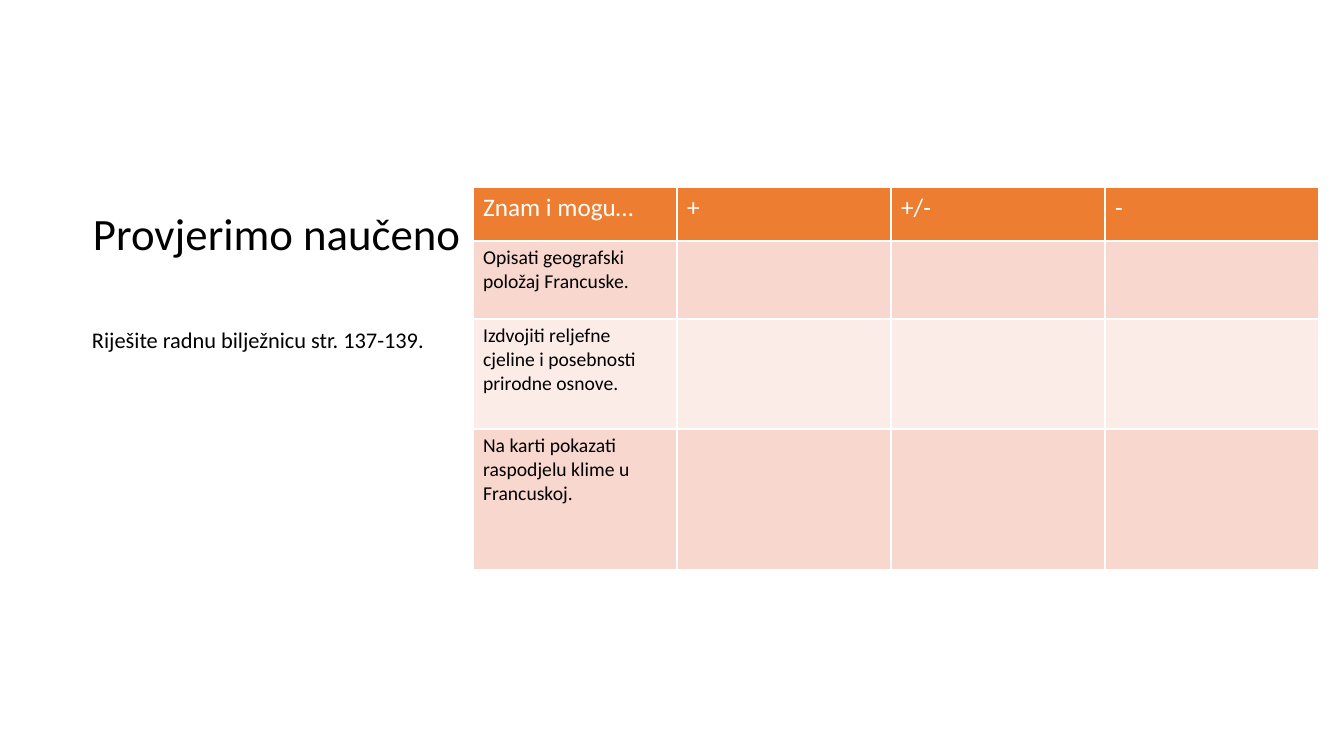
from lxml.etree import SubElement
from pptx import Presentation
from pptx.dml.color import RGBColor
from pptx.enum.text import MSO_ANCHOR, MSO_AUTO_SIZE, PP_ALIGN
from pptx.oxml.ns import qn
from pptx.util import Emu, Pt

EMU_PER_PX = 914400 / 100.8
BLACK = RGBColor(0x00, 0x00, 0x00)
WHITE = RGBColor(0xFF, 0xFF, 0xFF)
ORANGE = RGBColor(0xED, 0x7D, 0x31)
PEACH = RGBColor(0xF8, 0xD7, 0xCE)
PALE_PEACH = RGBColor(0xFC, 0xEC, 0xE8)

HEADINGS = ["Znam i mogu…", "+", "+/-", "-"]
SKILLS = [
    "Opisati geografski položaj Francuske.",
    "Izdvojiti reljefne cjeline i posebnosti prirodne osnove.",
    "Na karti pokazati raspodjelu klime u Francuskoj.",
]
COLUMN_WIDTHS = [204, 214, 214, 214]
ROW_HEIGHTS = [54, 78, 110, 141]


def px(length):
    return Emu(round(length * EMU_PER_PX))


def write(frame, text, *, size, color=BLACK, font="Calibri", line_spacing=None):
    paragraph = frame.paragraphs[0]
    paragraph.alignment = PP_ALIGN.LEFT
    paragraph.line_spacing = line_spacing
    run = paragraph.add_run()
    run.text = text
    run.font.name = font
    run.font.size = Pt(size)
    run.font.bold = False
    run.font.color.rgb = color


def outline_cell(cell, color, width):
    """Draw the same line on all four sides of a table cell."""
    properties = cell._tc.get_or_add_tcPr()
    for position, side in enumerate(("lnL", "lnR", "lnT", "lnB")):
        line = SubElement(properties, qn(f"a:{side}"), w=str(Pt(width)))
        fill = SubElement(line, qn("a:solidFill"))
        SubElement(fill, qn("a:srgbClr"), val=str(color))
        properties.insert(position, line)


class ReviewSlide:
    def __init__(self, presentation):
        self.slide = presentation.slides.add_slide(presentation.slide_layouts[5])
        self.border = WHITE
        self.header_fill = ORANGE
        self.bands = (PEACH, PALE_PEACH)

    def _fill_box(self, box, text, size):
        frame = box.text_frame
        frame.word_wrap = True
        frame.auto_size = MSO_AUTO_SIZE.NONE
        frame.vertical_anchor = MSO_ANCHOR.TOP
        frame.margin_left = frame.margin_right = 0
        frame.margin_top = frame.margin_bottom = 0
        write(frame, text, size=size, line_spacing=0.9)

    def title(self, text, left, top, width, height):
        heading = self.slide.shapes.title
        heading.left, heading.top = px(left), px(top)
        heading.width, heading.height = px(width), px(height)
        self._fill_box(heading, text, 32)

    def text(self, text, left, top, width, height):
        box = self.slide.shapes.add_textbox(px(left), px(top), px(width), px(height))
        self._fill_box(box, text, 16)

    def table(self, headings, skills, left, top, widths, heights):
        rows = [headings] + [[skill] + [""] * (len(headings) - 1) for skill in skills]
        table = self.slide.shapes.add_table(
            len(rows), len(headings), px(left), px(top), px(sum(widths)), px(sum(heights))
        ).table
        for column, width in zip(table.columns, widths):
            column.width = px(width)
        for row_number, (row, height, words) in enumerate(zip(table.rows, heights, rows)):
            row.height = px(height)
            is_header = row_number == 0
            for cell, text in zip(row.cells, words):
                cell.fill.solid()
                cell.fill.fore_color.rgb = (
                    self.header_fill if is_header else self.bands[(row_number - 1) % 2]
                )
                outline_cell(cell, self.border, 1)
                if text:
                    write(
                        cell.text_frame,
                        text,
                        size=18 if is_header else 14,
                        color=WHITE if is_header else BLACK,
                    )


def main():
    presentation = Presentation()
    presentation.slide_width, presentation.slide_height = px(1344), px(756)
    review = ReviewSlide(presentation)
    review.title("Provjerimo naučeno", 93, 212, 433, 188)
    review.text("Riješite radnu bilježnicu str. 137-139.", 92, 329, 433, 226)
    review.table(HEADINGS, SKILLS, 473, 187, COLUMN_WIDTHS, ROW_HEIGHTS)
    presentation.save("out.pptx")


if __name__ == "__main__":
    main()
